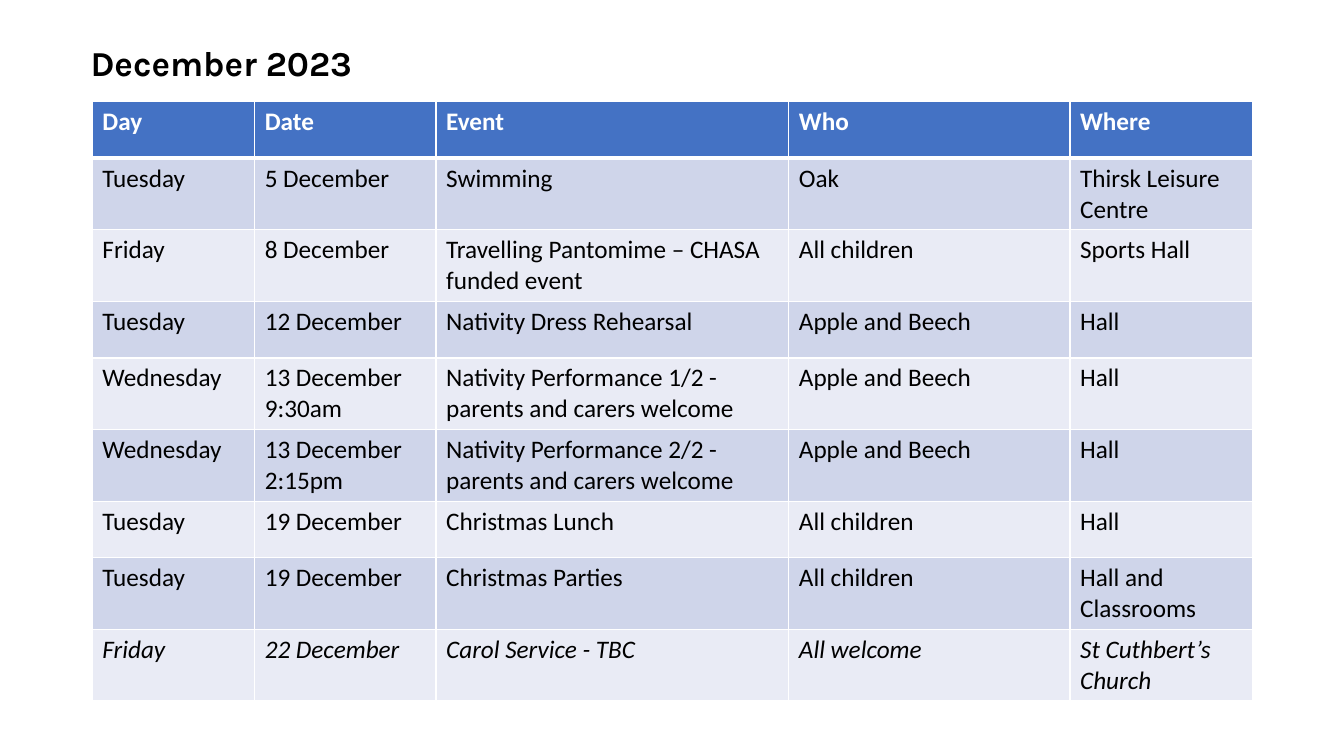
from lxml.etree import SubElement as add_node
from pptx import Presentation
from pptx.dml.color import RGBColor as Color
from pptx.enum.text import MSO_AUTO_SIZE as AutoSize
from pptx.oxml.ns import qn
from pptx.util import Inches, Pt

BLACK = Color(0x00, 0x00, 0x00)
WHITE = Color(0xFF, 0xFF, 0xFF)
HEADER_BLUE = Color(0x44, 0x72, 0xC4)
BANDS = [Color(0xCF, 0xD5, 0xEA), Color(0xE9, 0xEB, 0xF5)]

# Grid that covers the slide
GRID_COLUMNS, GRID_ROWS = 80, 45

TITLE = {"name": "Karla", "size": Pt(25), "bold": True}
BODY = {"name": "Calibri", "size": Pt(18), "bold": False}
HEADER = {**BODY, "bold": True}
TENTATIVE = {**BODY, "italic": True}

COLUMN_WIDTHS = [9.66, 10.8, 21, 16.74, 10.86]
ROW_HEIGHT = 3.36
HEADINGS = ["Day", "Date", "Event", "Who", "Where"]
EVENTS = [
    ["Tuesday", "5 December", "Swimming", "Oak", "Thirsk Leisure Centre"],
    ["Friday", "8 December", "Travelling Pantomime – CHASA funded event",
     "All children", "Sports Hall"],
    ["Tuesday", "12 December", "Nativity Dress Rehearsal", "Apple and Beech", "Hall"],
    ["Wednesday", "13 December\n9:30am",
     "Nativity Performance 1/2 - parents and carers welcome", "Apple and Beech", "Hall"],
    ["Wednesday", "13 December\n2:15pm",
     "Nativity Performance 2/2 - parents and carers welcome", "Apple and Beech", "Hall"],
    ["Tuesday", "19 December", "Christmas Lunch", "All children", "Hall"],
    ["Tuesday", "19 December", "Christmas Parties", "All children", "Hall and Classrooms"],
    ["Friday", "22 December", "Carol Service - TBC", "All welcome", "St Cuthbert’s Church"],
]


class CalendarPage:
    def __init__(self, deck):
        self.page = deck.slides.add_slide(deck.slide_layouts[6])
        self.column = deck.slide_width / GRID_COLUMNS
        self.row = deck.slide_height / GRID_ROWS

    def place(self, left, top, width, height):
        return (round(left * self.column), round(top * self.row),
                round(width * self.column), round(height * self.row))

    def fill_text(self, frame, text, style, color):
        frame.text = text
        for para in frame.paragraphs:
            for span in para.runs:
                for key, value in style.items():
                    setattr(span.font, key, value)
                span.font.color.rgb = color

    def title(self, text, *area):
        frame = self.page.shapes.add_textbox(*self.place(*area)).text_frame
        frame.word_wrap = True
        frame.auto_size = AutoSize.SHAPE_TO_FIT_TEXT
        self.fill_text(frame, text, TITLE, BLACK)

    def borders(self, cell, widths):
        properties = cell._tc.get_or_add_tcPr()
        for side, width in widths.items():
            line = add_node(properties, qn(f"a:ln{side}"), w=str(Pt(width)))
            fill = add_node(line, qn("a:solidFill"))
            add_node(fill, qn("a:srgbClr"), val=str(WHITE))

    def cell(self, cell, text, style, color, fill, widths):
        self.borders(cell, widths)
        cell.fill.solid()
        cell.fill.fore_color.rgb = fill
        self.fill_text(cell.text_frame, text, style, color)

    def calendar(self, left, top):
        count = len(EVENTS) + 1
        area = self.place(left, top, sum(COLUMN_WIDTHS), ROW_HEIGHT * count)
        table = self.page.shapes.add_table(count, len(HEADINGS), *area).table
        table.horz_banding = False
        for column, width in zip(table.columns, COLUMN_WIDTHS):
            column.width = round(width * self.column)
        for row in table.rows:
            row.height = round(ROW_HEIGHT * self.row)

        # Header row, with a thick rule below it
        for index, heading in enumerate(HEADINGS):
            self.cell(table.cell(0, index), heading, HEADER, WHITE, HEADER_BLUE,
                      {"L": 1, "R": 1, "T": 1, "B": 3})

        # Event rows in alternating bands; the last is still to be confirmed
        for number, event in enumerate(EVENTS, 1):
            style = TENTATIVE if number == len(EVENTS) else BODY
            widths = {"L": 1, "R": 1, "T": 3 if number == 1 else 1, "B": 1}
            for index, text in enumerate(event):
                self.cell(table.cell(number, index), text, style, BLACK,
                          BANDS[(number - 1) % 2], widths)


def main():
    deck = Presentation()
    deck.slide_width, deck.slide_height = Inches(13.33), Inches(7.5)
    page = CalendarPage(deck)
    page.calendar(5.5, 6.06)
    page.title("December 2023", 4.8, 2.16, 26.7, 3.12)
    deck.save("out.pptx")


if __name__ == "__main__":
    main()
